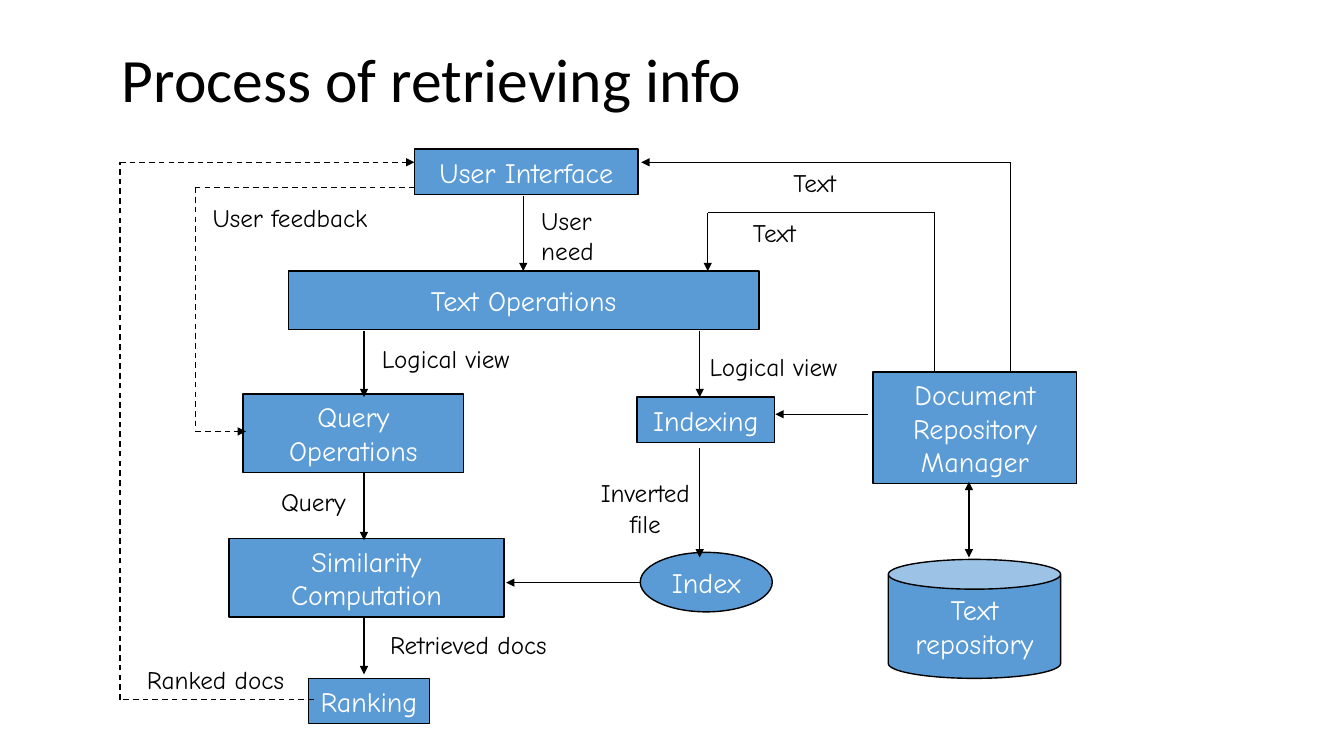
from itertools import pairwise

from lxml import etree
from pptx import Presentation
from pptx.dml.color import RGBColor
from pptx.enum.dml import MSO_LINE
from pptx.enum.shapes import MSO_CONNECTOR, MSO_SHAPE
from pptx.enum.text import MSO_ANCHOR, MSO_AUTO_SIZE, PP_ALIGN
from pptx.oxml.ns import qn
from pptx.util import Inches, Pt

BLUE = RGBColor(0x5B, 0x9B, 0xD5)
BLACK = RGBColor(0, 0, 0)
WHITE = RGBColor(0xFF, 0xFF, 0xFF)
TITLE_FONT, BODY_FONT = "Calibri", "Comic Neue"

# Shared columns and rows of the diagram, in inches
QUERY_X, NEED_X, INDEX_X, STORE_X = 3.61, 5.19, 6.94, 9.61
RANKED_X, FEEDBACK_X = 1.19, 1.94
TO_TEXT_X, FROM_TEXT_X, FROM_UI_X = 7.02, 9.27, 10.02
UI_X, UI_ROW, FEEDBACK_ROW, TEXT_ROW = 4.11, 1.61, 1.86, 2.11
OPS_TOP, OPS_BOTTOM, STEP_TOP = 2.69, 3.28, 3.94
MANAGER_TOP, INDEX_ROW, RANKED_ROW = 3.69, 5.78, 6.94

TITLE = ("Process of retrieving info", (1.11, 0.19, 9.5, 1.25))

RECT, OVAL, CAN = MSO_SHAPE.RECTANGLE, MSO_SHAPE.OVAL, MSO_SHAPE.CAN
# shape, text, (left, top, width, height), wraps
BOXES = [
    (RECT, "User Interface", (UI_X, 1.48, 2.22, 0.45), False),
    (RECT, "Text Operations", (2.86, OPS_TOP, 4.67, 0.58), False),
    (RECT, "Query Operations", (2.41, 3.91, 2.19, 0.78), True),
    (RECT, "Indexing", (6.32, STEP_TOP, 1.36, 0.45), False),
    (RECT, "Similarity Computation", (2.27, 5.34, 2.73, 0.78), True),
    (RECT, "Ranking", (3.06, 6.73, 1.2, 0.45), False),
    (RECT, "Document Repository\nManager", (8.66, MANAGER_TOP, 2.02, 1.11), True),
    (OVAL, "Index", (6.35, 5.48, 1.31, 0.59), False),
    (CAN, "Text repository", (8.81, 5.55, 1.71, 1.18), True),
]

# Corner points of each arrow, from its start to its head
SOLID_ROUTES = [
    [(QUERY_X, OPS_BOTTOM), (QUERY_X, STEP_TOP)],
    [(INDEX_X, OPS_BOTTOM), (INDEX_X, STEP_TOP)],
    [(8.61, 4.11), (7.69, 4.11)],
    [(INDEX_X, 4.44), (INDEX_X, 5.53)],
    [(6.36, INDEX_ROW), (5.02, INDEX_ROW)],
    [(QUERY_X, 4.69), (QUERY_X, 5.36)],
    [(QUERY_X, 6.11), (QUERY_X, 6.69)],
    [(NEED_X, 1.94), (NEED_X, OPS_TOP)],
    [(FROM_UI_X, MANAGER_TOP), (FROM_UI_X, UI_ROW), (6.36, UI_ROW)],
    [(FROM_TEXT_X, MANAGER_TOP), (FROM_TEXT_X, TEXT_ROW),
     (TO_TEXT_X, TEXT_ROW), (TO_TEXT_X, OPS_TOP)],
]
DASHED_ROUTES = [
    [(3.11, RANKED_ROW), (RANKED_X, RANKED_ROW), (RANKED_X, UI_ROW), (UI_X, UI_ROW)],
    [(UI_X, FEEDBACK_ROW), (FEEDBACK_X, FEEDBACK_ROW), (FEEDBACK_X, 4.28), (2.44, 4.28)],
]
STORE_ROUTE = [(STORE_X, 4.78), (STORE_X, 5.53)]

# text, (left, top, width, height), wraps, alignment
LEFT, CENTER = PP_ALIGN.LEFT, PP_ALIGN.CENTER
LABELS = [
    ("User need", (5.27, 1.99, 1, 0.7), True, LEFT),
    ("Logical view", (3.69, 3.36, 1.57, 0.4), False, LEFT),
    ("Logical view", (6.94, 3.44, 1.57, 0.4), False, LEFT),
    ("Inverted file", (5.69, 4.69, 1.42, 0.7), True, CENTER),
    ("Query", (2.69, 4.78, 0.94, 0.4), False, LEFT),
    ("Retrieved docs", (3.77, 6.19, 1.95, 0.4), False, LEFT),
    ("Text", (7.37, 2.11, 0.77, 0.4), False, LEFT),
    ("Text", (7.77, 1.61, 0.77, 0.4), False, LEFT),
    ("User feedback", (2.01, 1.96, 1.93, 0.4), False, LEFT),
    ("Ranked docs", (1.36, 6.54, 1.64, 0.4), False, LEFT),
]


def write(sp, text, size, color, font=BODY_FONT, align=LEFT, wrap=True):
    tf = sp.text_frame
    tf.text = text
    tf.word_wrap = wrap
    for p in tf.paragraphs:
        p.alignment = align
        p.font.name, p.font.size = font, Pt(size)
        p.font.color.rgb = color
    return tf


def add_box(slide, kind, text, area, wrap):
    sp = slide.shapes.add_shape(kind, *map(Inches, area))
    sp.shadow.inherit = False
    sp.fill.solid()
    sp.fill.fore_color.rgb = BLUE
    sp.line.color.rgb = BLACK
    sp.line.width = Pt(1)
    tf = write(sp, text, 20, WHITE, align=CENTER, wrap=wrap)
    tf.vertical_anchor = MSO_ANCHOR.MIDDLE


def add_route(slide, points, dashed=False, both_ends=False):
    """Draw straight segments through the points, with a head at the last one."""
    segments = list(pairwise(points))
    shapes = slide.shapes if len(segments) == 1 else slide.shapes.add_group_shape().shapes
    for start, end in segments:
        line = shapes.add_connector(MSO_CONNECTOR.STRAIGHT, *map(Inches, start + end))
        line.line.color.rgb = BLACK
        line.line.width = Pt(1)
        if dashed:
            line.line.dash_style = MSO_LINE.DASH
        props = line._element.spPr
        ln = props.find(qn("a:ln"))
        if both_ends:
            etree.SubElement(ln, qn("a:headEnd"), type="triangle")
        if end == points[-1]:
            etree.SubElement(ln, qn("a:tailEnd"), type="triangle")
        etree.SubElement(props, qn("a:effectLst"))


def main():
    prs = Presentation()
    prs.slide_width, prs.slide_height = Inches(13.33), Inches(7.5)
    slide = prs.slides.add_slide(prs.slide_layouts[6])

    text, area = TITLE
    title = slide.shapes.add_textbox(*map(Inches, area))
    tf = write(title, text, 44, BLACK, font=TITLE_FONT)
    tf.vertical_anchor = MSO_ANCHOR.MIDDLE
    tf.paragraphs[0].line_spacing = 0.9

    for box in BOXES:
        add_box(slide, *box)
    for points in SOLID_ROUTES:
        add_route(slide, points)
    for points in DASHED_ROUTES:
        add_route(slide, points, dashed=True)
    add_route(slide, STORE_ROUTE, both_ends=True)

    for text, area, wrap, align in LABELS:
        label = slide.shapes.add_textbox(*map(Inches, area))
        tf = write(label, text, 18, BLACK, align=align, wrap=wrap)
        tf.auto_size = MSO_AUTO_SIZE.SHAPE_TO_FIT_TEXT

    prs.save("out.pptx")


if __name__ == "__main__":
    main()
